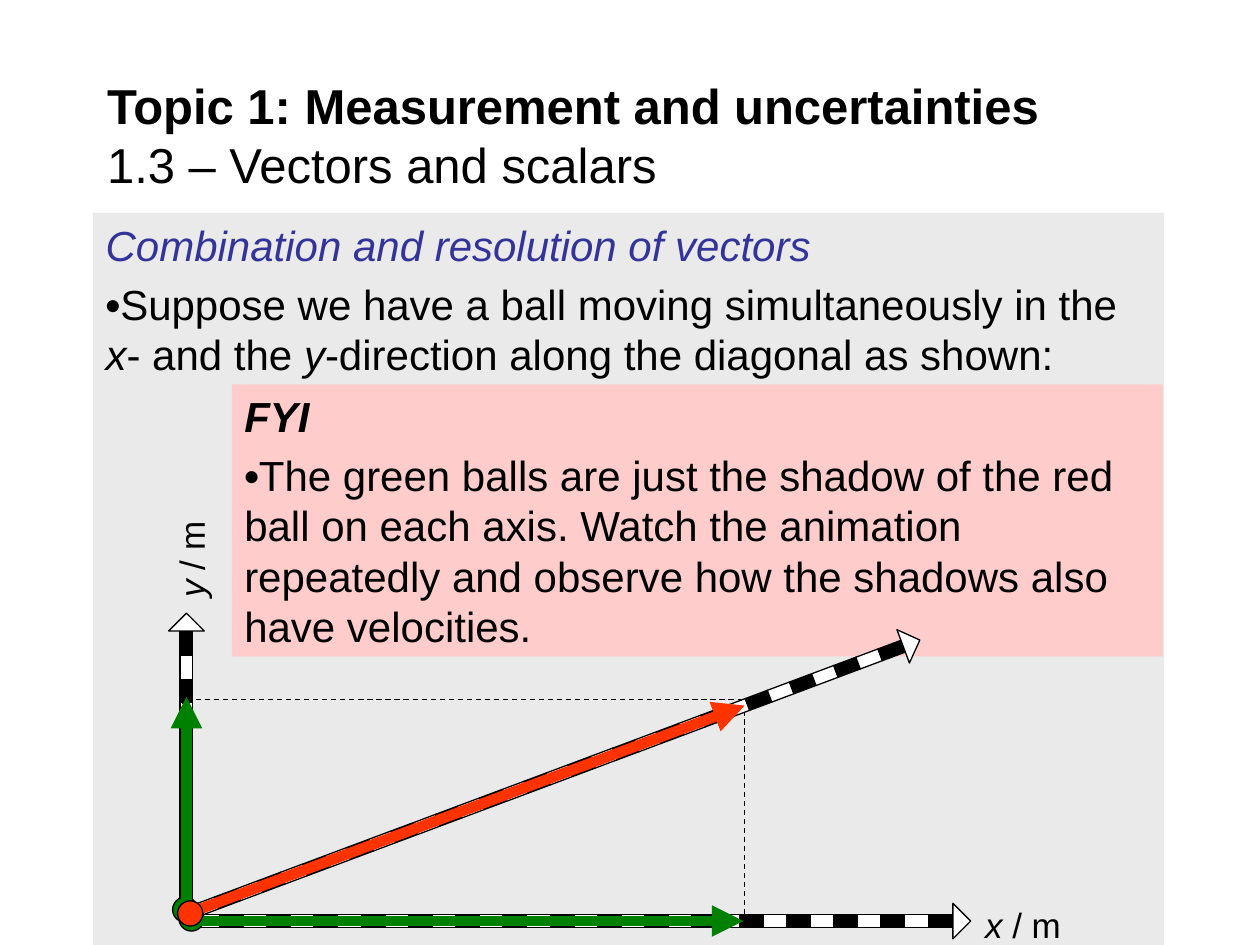
import math
from dataclasses import dataclass

from lxml import etree
from pptx import Presentation
from pptx import util as u
from pptx.dml.color import RGBColor
from pptx.enum import dml, shapes, text
from pptx.oxml import ns

Inches = u.Inches


@dataclass(frozen=True)
class Theme:
    font: str = "Arial"
    title: int = 28
    body: int = 24
    label: int = 20
    black: str = "000000"
    white: str = "FFFFFF"
    heading: str = "333399"
    panel: str = "EAEAEA"
    note: str = "FFCCCC"
    red: str = "FF3300"
    green: str = "008000"
    outline: float = 0.75
    vector: int = 6


THEME = Theme()
STRIPE_LENGTH, STRIPE_HEIGHT = 0.19, 0.1
STRIPE_STEP = 0.1875
BALL = 0.2


def color(value):
    return RGBColor.from_string(value)


def add_box(parent, kind, box, fill=None, line=None, rotation=0):
    shape = parent.add_shape(kind, *map(Inches, box))
    shape.shadow.inherit = False
    shape.rotation = rotation
    if fill:
        shape.fill.solid()
        shape.fill.fore_color.rgb = color(fill)
    else:
        shape.fill.background()
    if line:
        shape.line.color.rgb = color(line)
        shape.line.width = u.Pt(THEME.outline)
    else:
        shape.line.fill.background()
    return shape


def style(paragraph, size, fill=THEME.black):
    paragraph.alignment = text.PP_ALIGN.LEFT
    paragraph.font.name = THEME.font
    paragraph.font.size = u.Pt(size)
    paragraph.font.color.rgb = color(fill)


def add_runs(paragraph, runs):
    for words, bold, italic in runs:
        run = paragraph.add_run()
        run.text = words
        run.font.bold = bold
        run.font.italic = italic


def place_title(slide, box):
    title = slide.shapes.title
    title.left, title.top, title.width, title.height = map(Inches, box)
    title.text_frame.vertical_anchor = text.MSO_ANCHOR.MIDDLE
    paragraph = title.text_frame.paragraphs[0]
    style(paragraph, THEME.title)
    add_runs(paragraph, [("Topic 1: Measurement and uncertainties", True, False)])
    paragraph.add_line_break()
    add_runs(paragraph, [("1.3 – Vectors and scalars", False, False)])


def place_panel(slide, box, fill, paragraphs):
    panel = add_box(slide.shapes, shapes.MSO_SHAPE.RECTANGLE, box, fill)
    frame = panel.text_frame
    frame.word_wrap = True
    frame.vertical_anchor = text.MSO_ANCHOR.TOP
    for index, (font_color, runs) in enumerate(paragraphs):
        paragraph = frame.add_paragraph() if index else frame.paragraphs[0]
        style(paragraph, THEME.body, font_color)
        paragraph.space_before = u.Pt(5)
        add_runs(paragraph, runs)


def place_striped_arrow(slide, start, angle, count, label=None, label_box=None):
    group = slide.shapes.add_group_shape().shapes
    across, up = math.cos(math.radians(angle)), math.sin(math.radians(angle))

    def centred(distance, width, height):
        return (start[0] + distance * across - width / 2,
                start[1] - distance * up - height / 2, width, height)

    for index in range(count):
        add_box(group, shapes.MSO_SHAPE.RECTANGLE,
                centred(index * STRIPE_STEP, STRIPE_LENGTH, STRIPE_HEIGHT),
                THEME.black if index % 2 else THEME.white, THEME.black, 360 - angle)
    add_box(group, shapes.MSO_SHAPE.RIGHT_TRIANGLE,
            centred((count - 1) * STRIPE_STEP + 0.1, 0.2, 0.2),
            THEME.white, THEME.black, 225 - angle)
    if label:
        caption = group.add_textbox(*map(Inches, label_box))
        caption.rotation = 360 - angle
        caption.text_frame.word_wrap = True
        paragraph = caption.text_frame.paragraphs[0]
        style(paragraph, THEME.label)
        add_runs(paragraph, [(label, False, True), (" / m", False, False)])


def place_vector(slide, start, end, line):
    vector = slide.shapes.add_connector(
        shapes.MSO_CONNECTOR.STRAIGHT, *map(Inches, start + end))
    vector.line.color.rgb = color(line)
    vector.line.width = u.Pt(THEME.vector)
    etree.SubElement(vector.get_or_add_ln(), ns.qn("a:tailEnd"), type="triangle")
    etree.SubElement(vector._element.spPr, ns.qn("a:effectLst"))


def place_ball(slide, left, top, fill):
    add_box(slide.shapes, shapes.MSO_SHAPE.OVAL, (left, top, BALL, BALL),
            fill, THEME.black)


def place_diagram(slide):
    place_striped_arrow(slide, (1.48, 7.17), 90, 12, "y", (1.08, 4.19, 0.87, 0.43))
    projection = add_box(slide.shapes, shapes.MSO_SHAPE.RECTANGLE,
                         (1.45, 5.55, 4.46, 1.75), line=THEME.black)
    projection.line.dash_style = dml.MSO_LINE.DASH
    place_striped_arrow(slide, (1.65, 7.31), 0, 32, "x", (7.72, 7.12, 0.87, 0.43))
    place_striped_arrow(slide, (1.63, 7.2), 20.5, 32)
    place_vector(slide, (1.52, 7.24), (5.91, 5.6), THEME.red)
    place_ball(slide, 1.37, 7.12, THEME.green)
    place_ball(slide, 1.42, 7.19, THEME.green)
    place_vector(slide, (1.48, 7.27), (1.48, 5.53), THEME.green)
    place_vector(slide, (1.5, 7.31), (5.9, 7.31), THEME.green)
    place_ball(slide, 1.41, 7.15, THEME.red)


def main():
    presentation = Presentation()
    presentation.slide_width, presentation.slide_height = Inches(10), Inches(7.5)
    slide = presentation.slides.add_slide(presentation.slide_layouts[5])
    place_title(slide, (0.75, 0.58, 8.5, 0.98))
    place_panel(slide, (0.74, 1.69, 8.5, 5.81), THEME.panel, [
        (THEME.heading, [("Combination and resolution of vectors", False, True)]),
        (THEME.black, [
            ("•", True, False),
            ("Suppose we have a ball moving simultaneously in the ", False, False),
            ("x", False, True),
            ("- and the ", False, False),
            ("y", False, True),
            ("-direction along the diagonal as shown:", False, False),
        ]),
    ])
    place_panel(slide, (1.84, 3.05, 7.39, 2.16), THEME.note, [
        (THEME.black, [("FYI", True, True)]),
        (THEME.black, [
            ("•", True, False),
            ("The green balls are just the shadow of the red ball on each axis. "
             "Watch the animation repeatedly and observe how the shadows also "
             "have velocities.", False, False),
        ]),
    ])
    place_diagram(slide)
    presentation.save("out.pptx")


if __name__ == "__main__":
    main()
